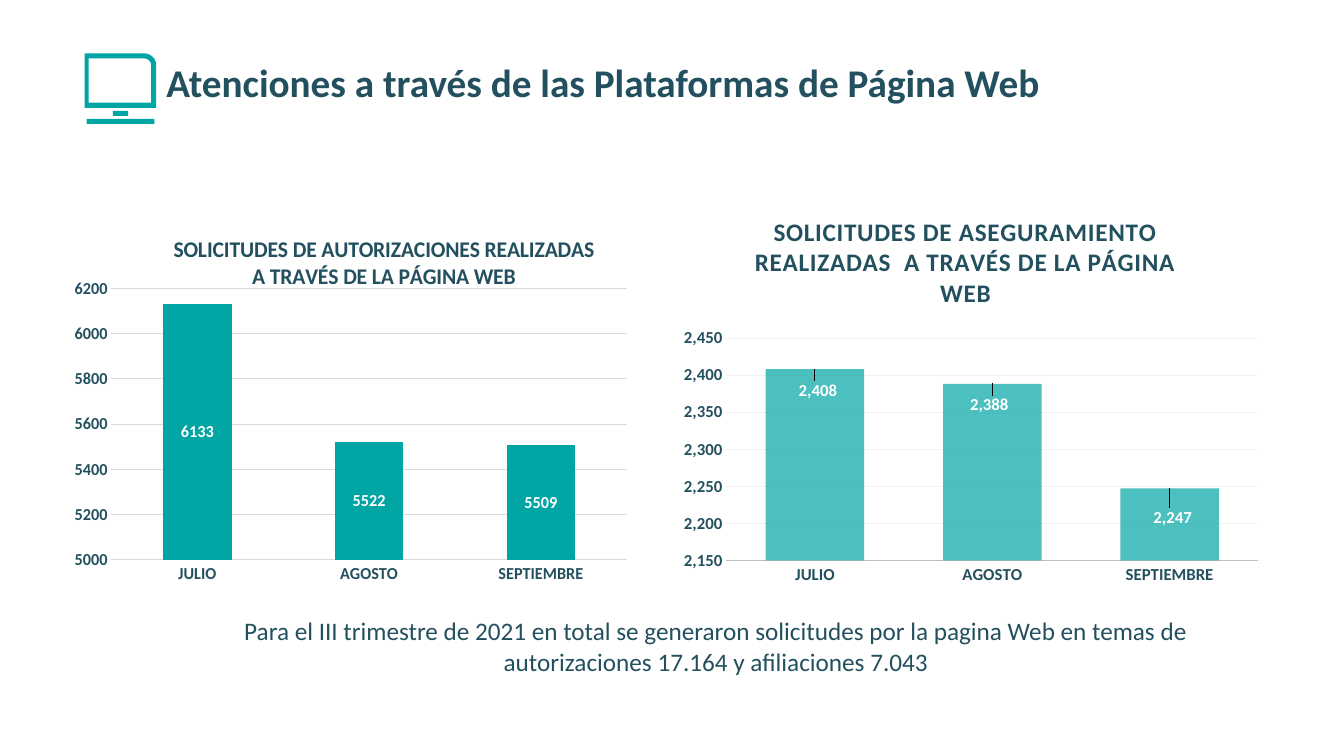
import math
from dataclasses import dataclass
from typing import Optional

import pptx
import pptx.chart.data
import pptx.dml.color
import pptx.enum.chart
import pptx.enum.text
import pptx.oxml.ns
import pptx.util
from lxml import etree

Inches = pptx.util.Inches
Place = pptx.enum.chart.XL_LABEL_POSITION
Kind = pptx.enum.chart.XL_CHART_TYPE
Align = pptx.enum.text.PP_ALIGN
qn = pptx.oxml.ns.qn


# Colours and type sizes
@dataclass(frozen=True)
class Theme:
    face: str = "Calibri"
    ink: str = "23505E"
    teal: str = "00A5A4"
    white: str = "FFFFFF"
    head: float = 28
    note: float = 18
    label: float = 12


THEME = Theme()


@dataclass(frozen=True)
class Graph:
    title: str
    size: float
    track: int
    spot: tuple
    box: tuple
    plot: tuple
    kind: int
    vals: tuple
    scale: tuple
    gap: int
    lap: int
    form: str
    grid: str
    base: str
    weight: float
    place: int
    alpha: Optional[int] = None
    shifts: tuple = ()


GRAPHS = (
    Graph(title="SOLICITUDES DE AUTORIZACIONES REALIZADAS A TRAVÉS DE LA PÁGINA WEB",
          size=16, track=0, spot=(0.14, 0.05), box=(0.74, 2.09, 5.58, 3.74),
          plot=(0.033, 0.207, 0.948, 0.719), kind=Kind.COLUMN_STACKED,
          vals=(6133, 5522, 5509), scale=(5000, 6200, 200), gap=150, lap=100,
          form="General", grid="D9D9D9", base="D9D9D9", weight=0.75,
          place=Place.CENTER),
    Graph(title="SOLICITUDES DE ASEGURAMIENTO REALIZADAS  A TRAVÉS DE LA PÁGINA WEB",
          size=18, track=50, spot=(0.13, 0.02), box=(6.67, 2, 5.93, 3.87),
          plot=(0.09, 0.35, 0.89, 0.57), kind=Kind.COLUMN_CLUSTERED,
          vals=(2408, 2388, 2247), scale=(2150, 2450, 50), gap=80, lap=25,
          form="#,##0", grid="F2F2F2", base="BFBFBF", weight=1.25,
          place=Place.OUTSIDE_END, alpha=70,
          shifts=((0.005, 0.09), (-0.005, 0.09), (0.005, 0.11))),
)
MONTHS = ("JULIO", "AGOSTO", "SEPTIEMBRE")


def tint(code: str) -> pptx.dml.color.RGBColor:
    return pptx.dml.color.RGBColor.from_string(code)


def style(font, size: float, color: str = THEME.ink, bold: bool = True) -> None:
    font.name, font.size, font.bold = THEME.face, pptx.util.Pt(size), bold
    font.color.rgb = tint(color)


def write(frame, text: str, *, size: float, bold: bool = True,
          align: int = Align.LEFT, track: int = 0) -> None:
    para = frame.paragraphs[0]
    para.alignment = align
    run = para.add_run()
    run.text = text
    style(run.font, size, bold=bold)
    if track:
        run.font._element.set("spc", str(track))


def settle(node, index: int, sides: dict, mode: str = "") -> None:
    """Give a chart part its manual layout."""
    for old in node.findall(qn("c:layout")):
        node.remove(old)
    layout = etree.Element(qn("c:layout"))
    node.insert(index, layout)
    manual = etree.SubElement(layout, qn("c:manualLayout"))
    pairs = {"layoutTarget": "inner"} if "w" in sides else {}
    if mode:
        pairs.update(xMode=mode, yMode=mode)
    pairs.update(sides)
    for name, value in pairs.items():
        etree.SubElement(manual, qn("c:" + name)).set("val", str(value))


def trace(slide) -> None:
    """Draw the screen icon as one outline with a hole."""
    def curve(x: float, y: float, r: float) -> list:
        turns = [math.radians(15 * i) for i in range(7)]
        return [(x + r * math.sin(t), y - r * math.cos(t)) for t in turns]

    def bar(x: float, y: float, w: float, h: float) -> list:
        return [(x, y), (x + w, y), (x + w, y + h), (x, y + h)]

    outer = [(0.84, 1.07), (0.84, 0.53), *curve(1.43, 0.65, 0.12), (1.55, 1.07)]
    inner = [(1.5, 1.02), *reversed(curve(1.43, 0.65, 0.07)), (0.88, 0.58), (0.88, 1.02)]
    rings = [outer, inner, bar(0.86, 1.18, 0.67, 0.05), bar(1.12, 1.1, 0.15, 0.05)]
    pen = None
    for ring in rings:
        first, *rest = [(Inches(x), Inches(y)) for x, y in ring]
        if pen is None:
            pen = slide.shapes.build_freeform(*first)
        else:
            pen.move_to(*first)
        pen.add_line_segments(rest, close=True)
    icon = pen.convert_to_shape()
    icon.shadow.inherit = False
    icon.fill.solid()
    icon.fill.fore_color.rgb = tint(THEME.teal)
    icon.line.fill.background()


def plot(slide, spec: Graph) -> None:
    data = pptx.chart.data.CategoryChartData(number_format=spec.form)
    data.categories = MONTHS
    data.add_series("Series 1", spec.vals)
    chart = slide.shapes.add_chart(spec.kind, *map(Inches, spec.box), data).chart
    chart.has_legend = False
    style(chart.font, THEME.label)

    # Chart title and plot area
    chart.has_title = True
    title = chart.chart_title
    write(title.text_frame, spec.title, size=spec.size, align=Align.CENTER, track=spec.track)
    settle(title._element, 1, dict(zip("xy", spec.spot)), "edge")
    area = chart._chartSpace.chart.plotArea
    settle(area, 0, dict(zip("xywh", spec.plot)), "edge")

    # Axes
    cats, vals = chart.category_axis, chart.value_axis
    for axis in (cats, vals):
        axis.major_tick_mark = axis.minor_tick_mark = pptx.enum.chart.XL_TICK_MARK.NONE
        style(axis.tick_labels.font, THEME.label)
    cats.format.line.color.rgb = tint(spec.base)
    cats.format.line.width = pptx.util.Pt(spec.weight)
    vals.format.line.fill.background()
    vals.minimum_scale, vals.maximum_scale, vals.major_unit = spec.scale
    vals.tick_labels.number_format = spec.form
    vals.tick_labels.number_format_is_linked = False
    grid = vals.major_gridlines.format.line
    grid.color.rgb = tint(spec.grid)
    grid.width = pptx.util.Pt(0.75)

    # Bars and their labels
    group = chart.plots[0]
    group.vary_by_categories = False
    group.gap_width, group.overlap = spec.gap, spec.lap
    bars = group.series[0]
    bars.format.fill.solid()
    bars.format.fill.fore_color.rgb = tint(THEME.teal)
    if spec.alpha:
        color = next(bars._element.iter(qn("a:srgbClr")))
        etree.SubElement(color, qn("a:alpha")).set("val", str(spec.alpha * 1000))
    labels = bars.data_labels
    labels.show_value = True
    labels.position = spec.place
    labels.number_format = spec.form
    labels.number_format_is_linked = False
    style(labels.font, THEME.label, THEME.white)
    for i, shift in enumerate(spec.shifts):
        label = bars.points[i].data_label
        style(label.font, THEME.label, THEME.white)
        label.position = spec.place
        settle(labels._element.findall(qn("c:dLbl"))[i], 1, dict(zip("xy", shift)))


def main() -> None:
    deck = pptx.Presentation()
    deck.slide_width, deck.slide_height = Inches(13.33), Inches(7.5)
    slide = deck.slides.add_slide(deck.slide_layouts[5])

    # Heading and closing note
    head = slide.shapes.title
    head.left, head.top, head.width, head.height = map(Inches, (1.55, 0.53, 9.17, 0.57))
    note = slide.shapes.add_textbox(*map(Inches, (1.86, 6.06, 10.48, 0.71)))
    for shape in (head, note):
        shape.text_frame.word_wrap = True
        shape.text_frame.auto_size = pptx.enum.text.MSO_AUTO_SIZE.NONE
        shape.text_frame.vertical_anchor = pptx.enum.text.MSO_ANCHOR.TOP
    write(head.text_frame, "Atenciones a través de las Plataformas de Página Web",
          size=THEME.head)
    write(note.text_frame, "Para el III trimestre de 2021 en total se generaron solicitudes "
          "por la pagina Web en temas de autorizaciones 17.164 y afiliaciones 7.043",
          size=THEME.note, bold=False, align=Align.CENTER)

    trace(slide)
    for spec in GRAPHS:
        plot(slide, spec)
    deck.save("out.pptx")


if __name__ == "__main__":
    main()
